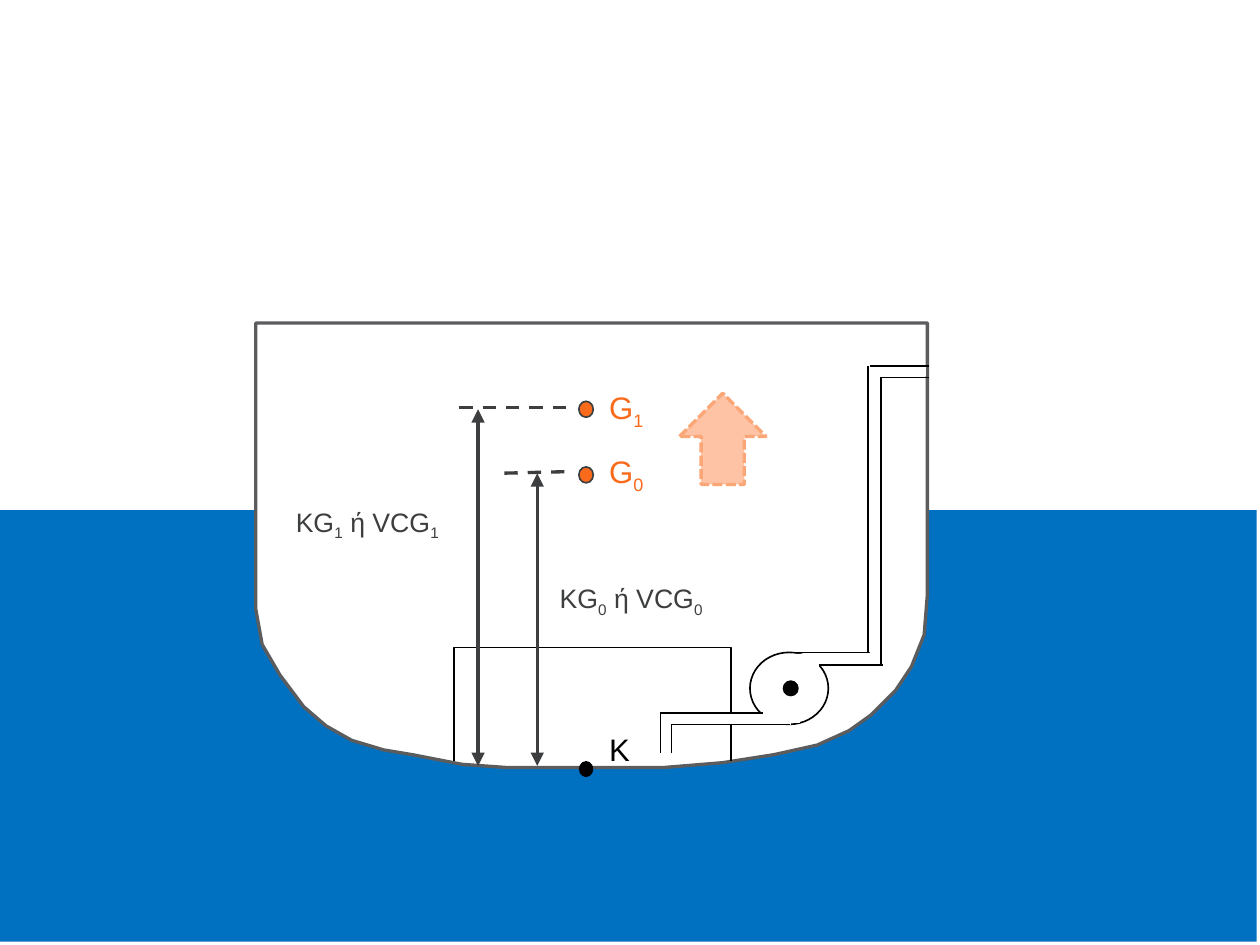
"""Draw a ship's cross-section whose centre of gravity rises from G0 to G1."""
import lxml.etree
import pptx
import pptx.dml.color
import pptx.enum.dml
import pptx.enum.shapes
import pptx.enum.text
import pptx.oxml.ns
import pptx.util

COLUMNS, ROWS = 788, 591
CELL = pptx.util.Inches(0.01)

RGBColor = pptx.dml.color.RGBColor
WHITE = RGBColor(0xFF, 0xFF, 0xFF)
BLACK = RGBColor(0x00, 0x00, 0x00)
SEA_BLUE = RGBColor(0x00, 0x70, 0xC0)
HULL_GREY = RGBColor(0x5B, 0x5C, 0x5E)
DARK_GREY = RGBColor(0x3C, 0x3E, 0x3F)
ORANGE = RGBColor(0xF9, 0x6A, 0x1B)
LIGHT_ORANGE = RGBColor(0xFD, 0xC3, 0xA4)
MID_ORANGE = RGBColor(0xFB, 0xA6, 0x76)

SHAPE = pptx.enum.shapes.MSO_SHAPE
DASH = pptx.enum.dml.MSO_LINE
ANCHOR = pptx.enum.text.MSO_ANCHOR

presentation = pptx.Presentation()
presentation.slide_width = COLUMNS * CELL
presentation.slide_height = ROWS * CELL
slide = presentation.slides.add_slide(presentation.slide_layouts[6])


def add_block(container, kind, cells, fill=None, line=None, width=0.75, dash=None, closed=True):
    """Add a preset shape in a box of cells, or an outline through points when kind is None."""
    if kind is None:
        builder = container.build_freeform(*cells[0], scale=CELL)
        builder.add_line_segments(cells[1:], close=closed)
        shape = builder.convert_to_shape()
    else:
        shape = container.add_shape(kind, *[cell * CELL for cell in cells])
    shape.shadow.inherit = False
    for paint, color in ((shape.fill, fill), (shape.line.fill, line)):
        if color is None:
            paint.background()
        else:
            paint.solid()
            paint.fore_color.rgb = color
    if line is not None:
        shape.line.width = pptx.util.Pt(width)
        shape.line.dash_style = dash


def add_line(container, ends, color=BLACK, width=0.75, dash=None, arrows=()):
    """Add a straight connector between two grid points."""
    connector = container.add_connector(
        pptx.enum.shapes.MSO_CONNECTOR.STRAIGHT, *[cell * CELL for cell in ends])
    connector.line.color.rgb = color
    connector.line.width = pptx.util.Pt(width)
    connector.line.dash_style = dash
    for arrow in arrows:
        lxml.etree.SubElement(connector.line._get_or_add_ln(),
                              pptx.oxml.ns.qn(arrow), type="triangle")
    lxml.etree.SubElement(connector._element.spPr, pptx.oxml.ns.qn("a:effectLst"))


HULL = [(160, 202), (160, 381), (164, 403), (175, 422), (190, 442), (204, 454),
        (220, 463), (240, 469), (258, 472), (289, 478), (317, 480), (415, 480),
        (452, 477), (484, 472), (511, 466), (531, 457), (545, 447), (560, 432),
        (570, 417), (578, 397), (580, 372), (580, 202)]
TANK = [(284, 476), (284, 405), (457, 405), (457, 476)]

add_block(slide.shapes, SHAPE.RECTANGLE, (0, 319, 786, 270), SEA_BLUE)
add_block(slide.shapes, None, HULL, WHITE, HULL_GREY, 1.5)
add_block(slide.shapes, None, TANK, line=BLACK, closed=False)

for level_line in ((354, 255, 284, 255), (353, 295, 312, 296)):
    add_line(slide.shapes, level_line, DARK_GREY, 1.5, DASH.DASH)
for column, top in ((299, 256), (336, 296)):
    add_line(slide.shapes, (column, 479, column, top), DARK_GREY, 1.5,
             arrows=("a:headEnd", "a:tailEnd"))
for top, fill, line in ((251, ORANGE, DARK_GREY), (292, ORANGE, DARK_GREY), (476, BLACK, None)):
    add_block(slide.shapes, SHAPE.OVAL, (362, top, 9, 10), fill, line)

FRAME_FORMAT = dict(word_wrap=True, margin_left=0, margin_right=0, margin_top=0, margin_bottom=0)
LABELS = [
    ((381, 237, 47, 37), ["G", "1"], 14, ORANGE, WHITE, ANCHOR.MIDDLE),
    ((381, 277, 47, 37), ["G", "0"], 14, ORANGE, WHITE, ANCHOR.MIDDLE),
    ((185, 308, 107, 38), ["KG", "1", " ή VCG", "1"], 12, DARK_GREY, WHITE, ANCHOR.MIDDLE),
    ((350, 356, 107, 38), ["KG", "0", " ή VCG", "0"], 12, DARK_GREY, WHITE, ANCHOR.MIDDLE),
    ((381, 442, 47, 38), ["K"], 14, BLACK, None, ANCHOR.BOTTOM),
]
for box, pieces, size, color, fill, anchor in LABELS:
    label = slide.shapes.add_textbox(*[cell * CELL for cell in box])
    if fill is not None:
        label.fill.solid()
        label.fill.fore_color.rgb = fill
    frame = label.text_frame
    for name, value in FRAME_FORMAT.items():
        setattr(frame, name, value)
    frame.vertical_anchor = anchor
    paragraph = frame.paragraphs[0]
    paragraph.line_spacing = 0.85
    paragraph.space_before = pptx.util.Pt(0.3 * size)
    for piece in pieces:
        run = paragraph.add_run()
        run.text = piece
        for name, value in dict(name="Arial", size=pptx.util.Pt(size)).items():
            setattr(run.font, name, value)
        run.font.color.rgb = color
        if piece.isdigit():
            run.font._element.set("baseline", "-25000")

pump = slide.shapes.add_group_shape().shapes
add_block(pump, SHAPE.OVAL, (469, 408, 49, 45), WHITE, BLACK)
add_block(pump, SHAPE.OVAL, (490, 426, 9, 9), BLACK, BLACK)
PIPE_STAGES = [
    ([(477, 443, 23, 9), (430, 447, 64, 6)],
     [(477, 446, 413, 446), (494, 453, 420, 453)]),
    ([(495, 409, 57, 6)],
     [(544, 408, 494, 408), (552, 416, 507, 416)]),
    ([(489, 414, 23, 9)],
     [(420, 471, 420, 453), (413, 471, 413, 445)]),
    ([(544, 229, 6, 181)],
     [(543, 408, 543, 229), (551, 416, 551, 236)]),
    ([(546, 229, 33, 6)], []),
]
for openings, walls in PIPE_STAGES:
    for opening in openings:
        add_block(pump, SHAPE.RECTANGLE, opening, WHITE, WHITE, 0.25)
    for wall in walls:
        add_line(pump, wall)

add_block(slide.shapes, SHAPE.UP_ARROW, (425, 246, 54, 57),
          LIGHT_ORANGE, MID_ORANGE, 1.5, DASH.SQUARE_DOT)
for left, row in ((544, 229), (551, 236)):
    add_line(slide.shapes, (581, row, left, row))

presentation.save("out.pptx")
